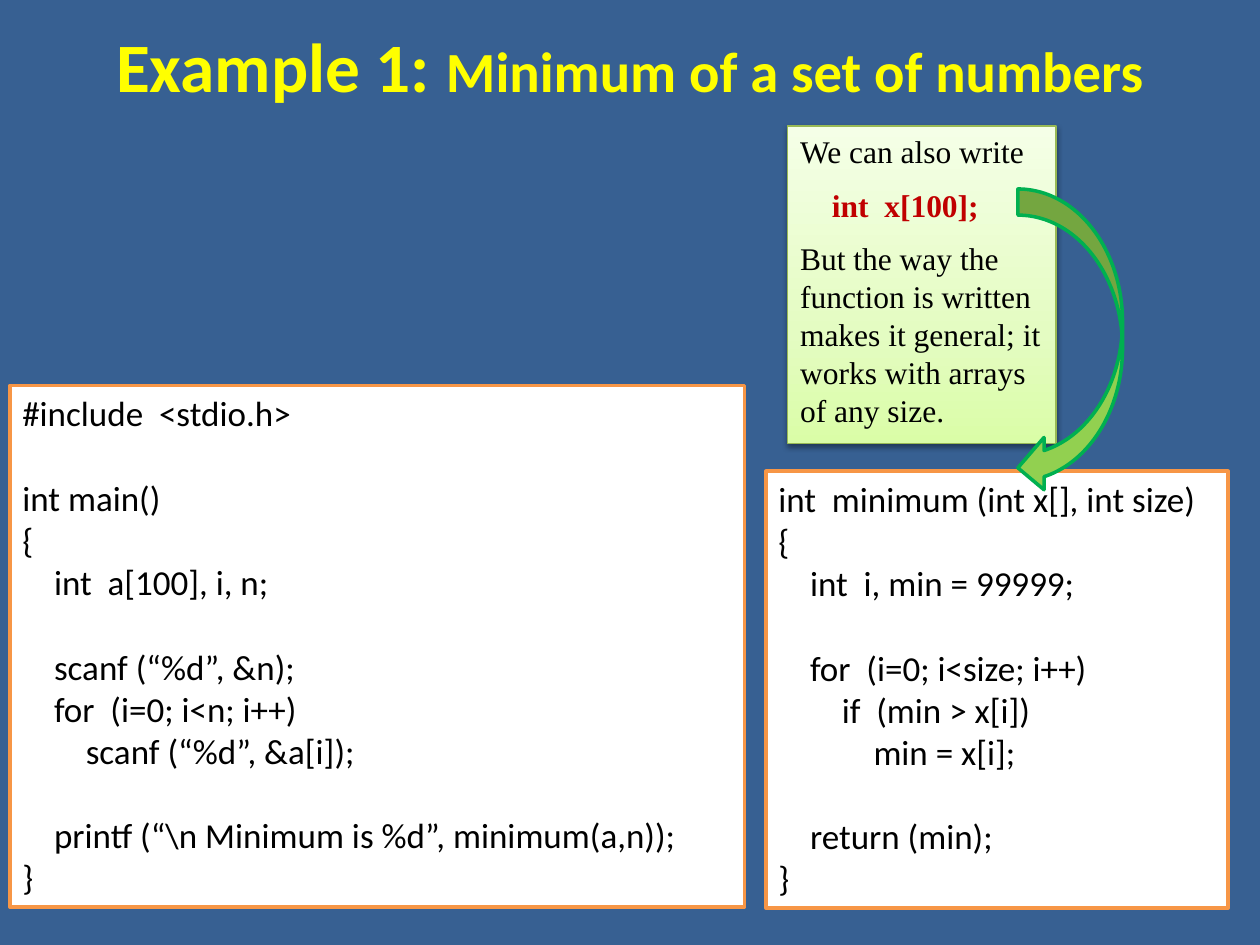
"""Build the slide on finding the minimum of a set of numbers."""
import copy
import pptx
import pptx.dml.color
import pptx.enum.shapes
import pptx.enum.text
import pptx.oxml
import pptx.oxml.ns
import pptx.util

Cm, Pt = pptx.util.Cm, pptx.util.Pt
KINDS = pptx.enum.shapes.MSO_SHAPE
STEP, LINE = 0.64, 24.4

HEAD = [("Example 1: ", 39.6), ("Minimum of a set of numbers", 32.4)]
# Each code line: indent level, blank lines above, text
MAIN = [
    (0, 0, "#include  <stdio.h>"),
    (0, 1, "int main()"),
    (0, 0, "{"),
    (1, 0, "int  a[100], i, n;"),
    (1, 1, "scanf (“%d”, &n);"),
    (1, 0, "for  (i=0; i<n; i++)"),
    (2, 0, "scanf (“%d”, &a[i]);"),
    (1, 1, "printf (“\\n Minimum is %d”, minimum(a,n));"),
    (0, 0, "}"),
]
FUNC = [
    (0, 0, "int  minimum (int x[], int size)"),
    (0, 0, "{"),
    (1, 0, "int  i, min = 99999;"),
    (1, 1, "for  (i=0; i<size; i++)"),
    (2, 0, "if  (min > x[i])"),
    (3, 0, "min = x[i];"),
    (1, 1, "return (min);"),
    (0, 0, "}"),
]
NOTE = [
    (0, "000000", "We can also write"),
    (1, "C00000", "int  x[100];"),
    (0, "000000", "But the way the function is written makes it general; "
                  "it works with arrays of any size."),
]
CODES = [((0.2, 7.77, 14.81, 10.52), MAIN), ((15.44, 9.5, 9.32, 8.81), FUNC)]
STOPS = [(0, "DAFDA7"), (0.35, "E4FCC2"), (1, "F5FFE7")]
SHADE = (
    '<a:effectLst %s><a:outerShdw blurRad="40000" dist="20000" dir="5400000" '
    'rotWithShape="0"><a:srgbClr val="000000"><a:alpha val="38000"/></a:srgbClr>'
    "</a:outerShdw></a:effectLst>" % pptx.oxml.ns.nsdecls("a")
)


def tint(text):
    return pptx.dml.color.RGBColor.from_string(text)


def style(font, name, size, color, bold=False):
    font.name, font.size, font.bold = name, Pt(size), bold
    font.color.rgb = tint(color)


def shape(slide, kind, box, fill, line, width):
    item = slide.shapes.add_shape(kind, *map(Cm, box))
    item.shadow.inherit = False
    if fill:
        item.fill.solid()
        item.fill.fore_color.rgb = tint(fill)
    item.line.color.rgb = tint(line)
    item.line.width = Pt(width)
    return item


def write(item, rows, name, size):
    frame = item.text_frame
    frame.word_wrap = True
    frame.vertical_anchor = pptx.enum.text.MSO_ANCHOR.TOP
    frame.text = "\n".join(row[-1] for row in rows)
    for para, (level, gap, color, _) in zip(frame.paragraphs, rows):
        para.alignment = pptx.enum.text.PP_ALIGN.LEFT
        para.space_before = Pt(gap)
        para._p.get_or_add_pPr().set("marL", str(Cm(STEP * level)))
        style(para.runs[0].font, name, size, color, color != "000000")


def blend(item, stops):
    item.fill.gradient()
    item.fill.gradient_angle = 90
    marks = item.fill.gradient_stops
    first = item._element.spPr.find(".//" + pptx.oxml.ns.qn("a:gs"))
    for _ in range(len(stops) - len(marks)):
        first.addnext(copy.deepcopy(first))
    for mark, (place, color) in zip(item.fill.gradient_stops, stops):
        mark.position = place
        mark.color.rgb = tint(color)


def main():
    deck = pptx.Presentation()
    deck.slide_width, deck.slide_height = Cm(25.4), Cm(19.05)
    slide = deck.slides.add_slide(deck.slide_layouts[5])
    slide.background.fill.solid()
    slide.background.fill.fore_color.rgb = tint("376092")

    title = slide.shapes.title
    title.left, title.top, title.width, title.height = map(Cm, (1.27, 0, 22.86, 2.62))
    title.text_frame.vertical_anchor = pptx.enum.text.MSO_ANCHOR.MIDDLE
    para = title.text_frame.paragraphs[0]
    para.alignment = pptx.enum.text.PP_ALIGN.CENTER
    for text, size in HEAD:
        run = para.add_run()
        run.text = text
        style(run.font, "Calibri", size, "FFFF00", True)

    for box, code in CODES:
        item = shape(slide, KINDS.RECTANGLE, box, "FFFFFF", "F79646", 2)
        rows = [(level, LINE * gap, "000000", text) for level, gap, text in code]
        write(item, rows, "Calibri", 20)

    note = shape(slide, KINDS.RECTANGLE, (15.88, 2.54, 5.41, 6.4), None, "98B955", 0.75)
    blend(note, STOPS)
    props = note._element.spPr
    props.replace(props.find(pptx.oxml.ns.qn("a:effectLst")), pptx.oxml.parse_xml(SHADE))
    rows = [(level, 9, color, text) for level, color, text in NOTE]
    write(note, rows, "Times New Roman", 18)

    shape(slide, KINDS.CURVED_LEFT_ARROW, (20.52, 3.81, 2.11, 6.15), "92D050", "00B050", 2)
    deck.save("out.pptx")


if __name__ == "__main__":
    main()
